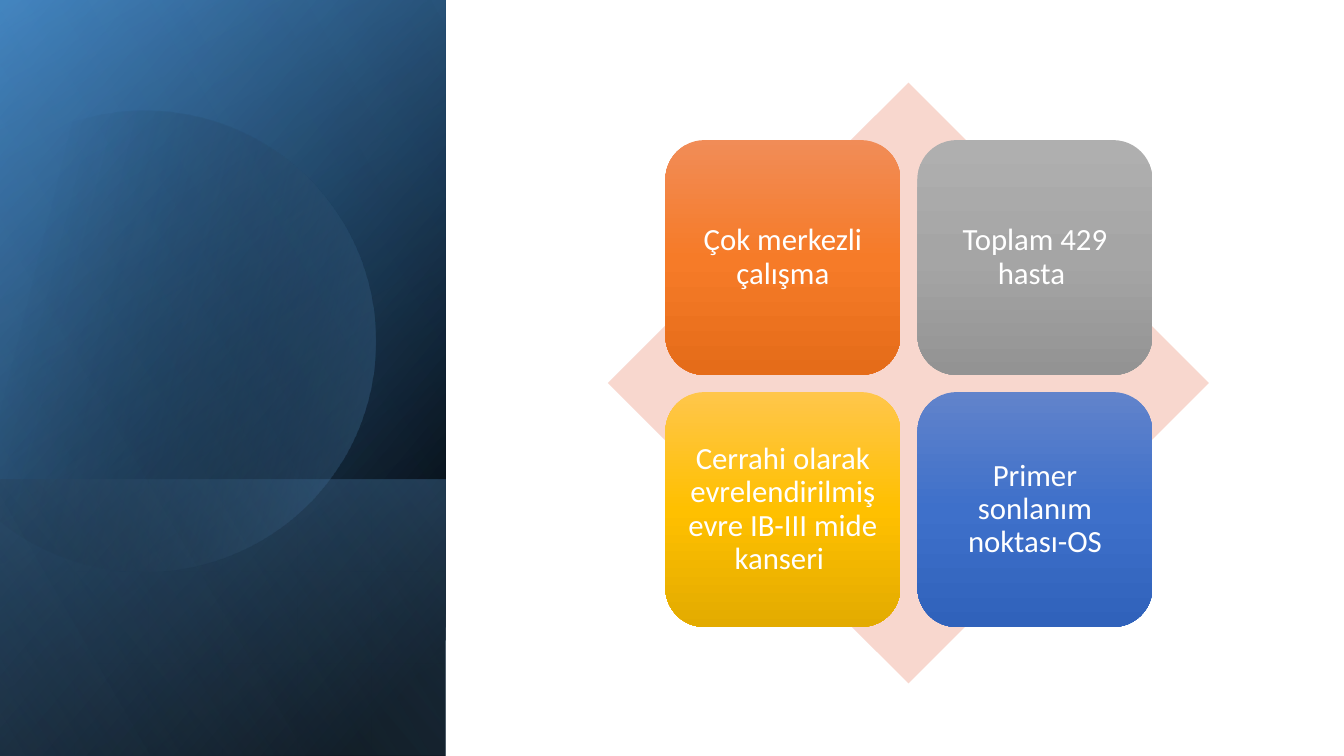
"""Build a slide with a layered gradient side panel and a four-tile diamond matrix."""
import math
from dataclasses import dataclass

import lxml.etree
import pptx
import pptx.dml.color
import pptx.enum.shapes
import pptx.enum.text
import pptx.oxml.ns
import pptx.util

Inches = pptx.util.Inches
MSO_SHAPE = pptx.enum.shapes.MSO_SHAPE
qn = pptx.oxml.ns.qn
PANEL_WIDTH = 4.42


@dataclass(frozen=True)
class Theme:
    """Colours and type of the slide."""
    font: str = "Calibri"
    tile_size: int = 22
    text: str = "FFFFFF"
    diamond: str = "F8D7CE"
    black: str = "000000"
    deep_blue: str = "2E75B6"
    blue: str = "5B9BD5"
    pale_blue: str = "9DC3E6"
    orange: tuple = ("F18C57", "F67B28", "E56C19")
    grey: tuple = ("AFAFAF", "A5A5A5", "939393")
    gold: tuple = ("FFC64B", "FFC000", "E3AB00")
    royal: tuple = ("6183CB", "3E70CA", "3062BB")


THEME = Theme()


def rgb(colour):
    """Turn a hex string into a colour."""
    return pptx.dml.color.RGBColor.from_string(colour)


def make_plain(shape):
    """Remove the shadow and outline."""
    shape.shadow.inherit = False
    shape.line.fill.background()


def set_gradient(shape, stops, angle):
    """Fill with (position, colour, opacity) stops in percent, at an angle in degrees."""
    grad = lxml.etree.Element(qn("a:gradFill"), rotWithShape="1")
    gs_list = lxml.etree.SubElement(grad, qn("a:gsLst"))
    for position, colour, opacity in stops:
        gs = lxml.etree.SubElement(gs_list, qn("a:gs"), pos=str(position * 1000))
        clr = lxml.etree.SubElement(gs, qn("a:srgbClr"), val=colour)
        if opacity < 100:
            lxml.etree.SubElement(clr, qn("a:alpha"), val=str(opacity * 1000))
    lxml.etree.SubElement(grad, qn("a:lin"), ang=str(angle * 60000), scaled="0")
    shape._element.spPr.insert(2, grad)


def add_panel(s, top, height, stops, angle):
    """Add a quarter-turned, mirrored gradient layer to the side panel."""
    sp = s.shapes.add_shape(
        MSO_SHAPE.RECTANGLE,
        Inches((PANEL_WIDTH - height) / 2), Inches(top + (height - PANEL_WIDTH) / 2),
        Inches(height), Inches(PANEL_WIDTH))
    sp.rotation = 90
    sp._element.spPr.xfrm.set("flipH", "1")
    make_plain(sp)
    set_gradient(sp, stops, angle)


def arc_point(x, y, radius, angle, tangent=0):
    """Return a point on a circle, moved along the tangent by a share of the radius."""
    c, n = math.cos(angle), math.sin(angle)
    return (Inches(x + radius * (c - tangent * n)), Inches(y + radius * (n + tangent * c)))


def add_cut_disc(s, box, circle, start, end, rotation, stops, angle):
    """Add a rotated disc of four curves, cut straight from the end angle to the start."""
    left, top, width, height = map(Inches, box)
    step = math.radians(end - start) / 4
    k = 4 / 3 * math.tan(step / 4)
    angles = [math.radians(start) + i * step for i in range(5)]
    points = [arc_point(*circle, a) for a in angles]
    builder = s.shapes.build_freeform(*points[0])
    builder.add_line_segments(points[1:], close=True)
    sp = builder.convert_to_shape()
    sp.left, sp.top, sp.width, sp.height = left, top, width, height
    sp.rotation = rotation

    outline = sp._element.spPr.find(".//" + qn("a:path"))
    outline.set("w", str(width))
    outline.set("h", str(height))
    first = outline.find(".//" + qn("a:pt"))
    first.set("x", str(points[0][0]))
    first.set("y", str(points[0][1]))
    for line, a, b in zip(outline.findall(qn("a:lnTo")), angles, angles[1:]):
        curve = lxml.etree.Element(qn("a:cubicBezTo"))
        for at, tangent in ((a, k), (b, -k), (b, 0)):
            x, y = arc_point(*circle, at, tangent)
            lxml.etree.SubElement(curve, qn("a:pt"), x=str(x), y=str(y))
        outline.replace(line, curve)
    make_plain(sp)
    set_gradient(sp, stops, angle)


def add_diamond(s, left, top, size):
    """Add the diamond behind the tiles."""
    sp = s.shapes.add_shape(MSO_SHAPE.DIAMOND, Inches(left), Inches(top),
                            Inches(size), Inches(size))
    make_plain(sp)
    sp.fill.solid()
    sp.fill.fore_color.rgb = rgb(THEME.diamond)


def add_tile(s, left, top, size, text, colours):
    """Add a rounded gradient tile with centred text."""
    sp = s.shapes.add_shape(MSO_SHAPE.ROUNDED_RECTANGLE, Inches(left), Inches(top),
                            Inches(size), Inches(size))
    make_plain(sp)
    set_gradient(sp, [(i * 50, c, 100) for i, c in enumerate(colours)], 90)
    tf = sp.text_frame
    tf.word_wrap = True
    tf.vertical_anchor = pptx.enum.text.MSO_ANCHOR.MIDDLE
    tf.margin_left = tf.margin_right = tf.margin_top = tf.margin_bottom = Inches(0.09)
    p = tf.paragraphs[0]
    p.text = text
    p.alignment = pptx.enum.text.PP_ALIGN.CENTER
    p.line_spacing = 0.9
    p.font.name = THEME.font
    p.font.size = pptx.util.Pt(THEME.tile_size)
    p.font.color.rgb = rgb(THEME.text)


def main():
    """Build and save the slide."""
    prs = pptx.Presentation()
    prs.slide_width, prs.slide_height = Inches(13.33), Inches(7.5)
    s = prs.slides.add_slide(prs.slide_layouts[6])

    t = THEME
    add_panel(s, 0, 7.5, [(8, t.black, 100), (100, t.deep_blue, 100)], 50)
    add_panel(s, 0, 7.5, [(0, t.black, 0), (99, t.blue, 46)], 30)
    add_panel(s, 4.76, 2.74, [(2, t.blue, 29), (100, t.black, 30)], 130)
    add_cut_disc(s, (-0.55, 1.06, 4.27, 4.57), (1.98, 2.28, 2.29), -118, 150, 343.9,
                 [(29, t.black, 0), (100, t.blue, 43)], 30)
    add_panel(s, 0, 7.5, [(0, t.black, 0), (99, t.pale_blue, 11)], 120)

    add_diamond(s, 6.03, 0.82, 5.96)
    tiles = [
        ("Çok merkezli çalışma", t.orange),
        ("Toplam 429 hasta ", t.grey),
        ("Cerrahi olarak evrelendirilmiş evre IB-III mide kanseri ", t.gold),
        ("Primer sonlanım noktası-OS", t.royal),
    ]
    size, step = 2.33, 2.5
    for i, (text, colours) in enumerate(tiles):
        row, col = divmod(i, 2)
        add_tile(s, 6.6 + col * step, 1.39 + row * step, size, text, colours)

    prs.save("out.pptx")


if __name__ == "__main__":
    main()
